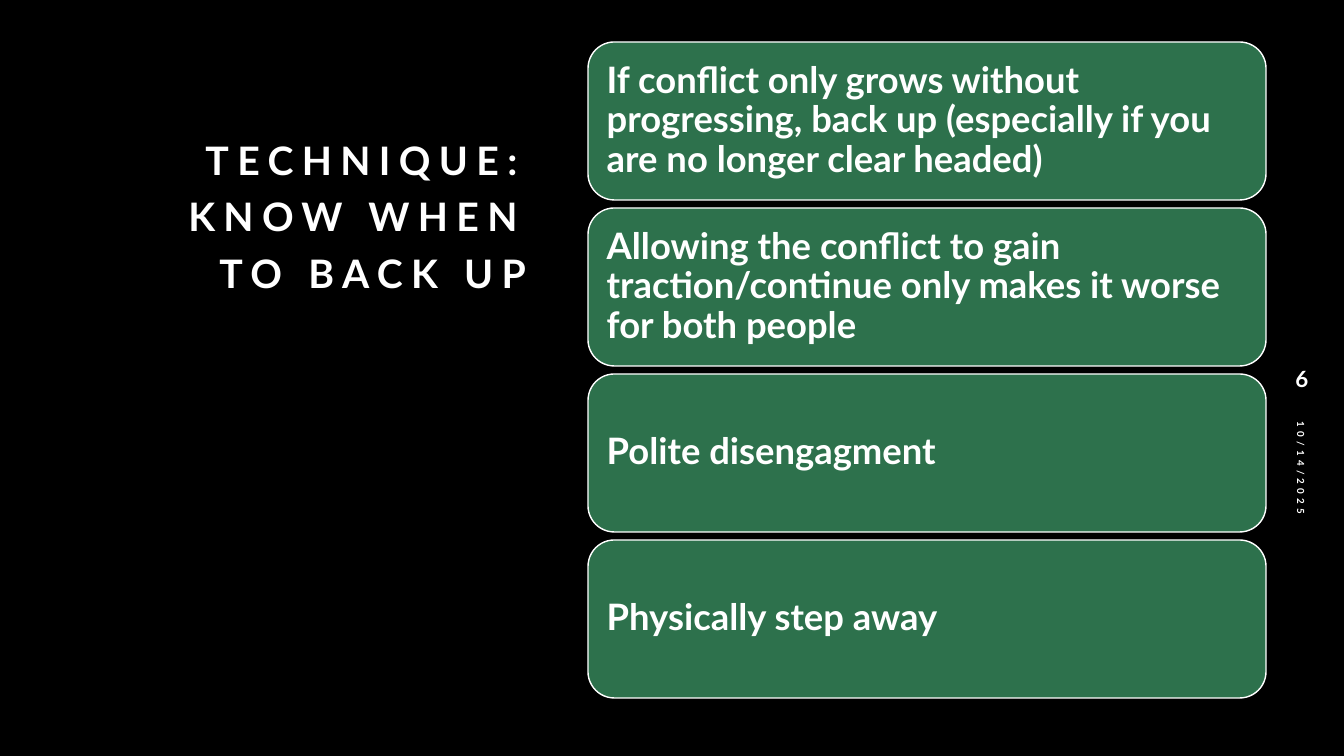
from pptx import Presentation
from pptx.dml.color import RGBColor as Rgb
from pptx.enum.shapes import MSO_SHAPE as Shape
from pptx.enum.text import MSO_ANCHOR as Anchor, PP_ALIGN as Align
from pptx.util import Emu, Pt

SCALE = 914400 / 100.8
HUES = {"back": "000000", "card": "2D714C", "text": "FFFFFF"}
CARDS = [
    "If conflict only grows without progressing, back up "
    "(especially if you are no longer clear headed)",
    "Allowing the conflict to gain traction/continue only makes it worse "
    "for both people",
    "Polite disengagment",
    "Physically step away",
]


def px(count):
    return Emu(round(count * SCALE))


def hue(name):
    return Rgb.from_string(HUES[name])


def write(shape, text, size, align=Align.LEFT, anchor=Anchor.MIDDLE,
          lead=1.0, after=0, track=0):
    """Put one run of bold text into a shape."""
    frame = shape.text_frame
    frame.word_wrap = True
    frame.vertical_anchor = anchor
    para = frame.paragraphs[0]
    para.alignment = align
    para.line_spacing = lead
    para.space_after = Pt(after)
    run = para.add_run()
    run.text = text
    font = run.font
    font.name, font.size, font.bold = "Lato", Pt(size), True
    font.color.rgb = hue("text")
    if track:
        font._element.set("spc", str(track * 100))


def label(slide, box, text, size, turn=0, **style):
    shape = slide.shapes.add_textbox(*map(px, box))
    shape.rotation = turn
    write(shape, text, size, **style)


def card(slide, box, text):
    shape = slide.shapes.add_shape(Shape.ROUNDED_RECTANGLE, *map(px, box))
    shape.shadow.inherit = False
    shape.fill.solid()
    shape.fill.fore_color.rgb = hue("card")
    shape.line.color.rgb = hue("text")
    shape.line.width = Pt(1)
    frame = shape.text_frame
    frame.margin_left = frame.margin_right = px(11)
    frame.margin_top = frame.margin_bottom = px(11)
    write(shape, text, 26, lead=0.9, after=9)


def main():
    deck = Presentation()
    deck.slide_width, deck.slide_height = px(1344), px(756)
    slide = deck.slides.add_slide(deck.slide_layouts[6])
    fill = slide.background.fill
    fill.solid()
    fill.fore_color.rgb = hue("back")

    # Title
    label(slide, (103, 95, 433, 206), "TECHNIQUE: KNOW WHEN TO BACK UP", 28,
          align=Align.RIGHT, anchor=Anchor.BOTTOM, lead=1.2, track=6)

    # Date and slide number
    label(slide, (1154, 539, 294, 40), "10/14/2025", 7, turn=90,
          after=6, track=3)
    label(slide, (1267, 355, 70, 47), "6", 16, align=Align.CENTER, after=6)

    # Column of cards
    for row, text in enumerate(CARDS):
        card(slide, (588, 42 + row * 166, 678, 158), text)

    deck.save("out.pptx")


if __name__ == "__main__":
    main()
